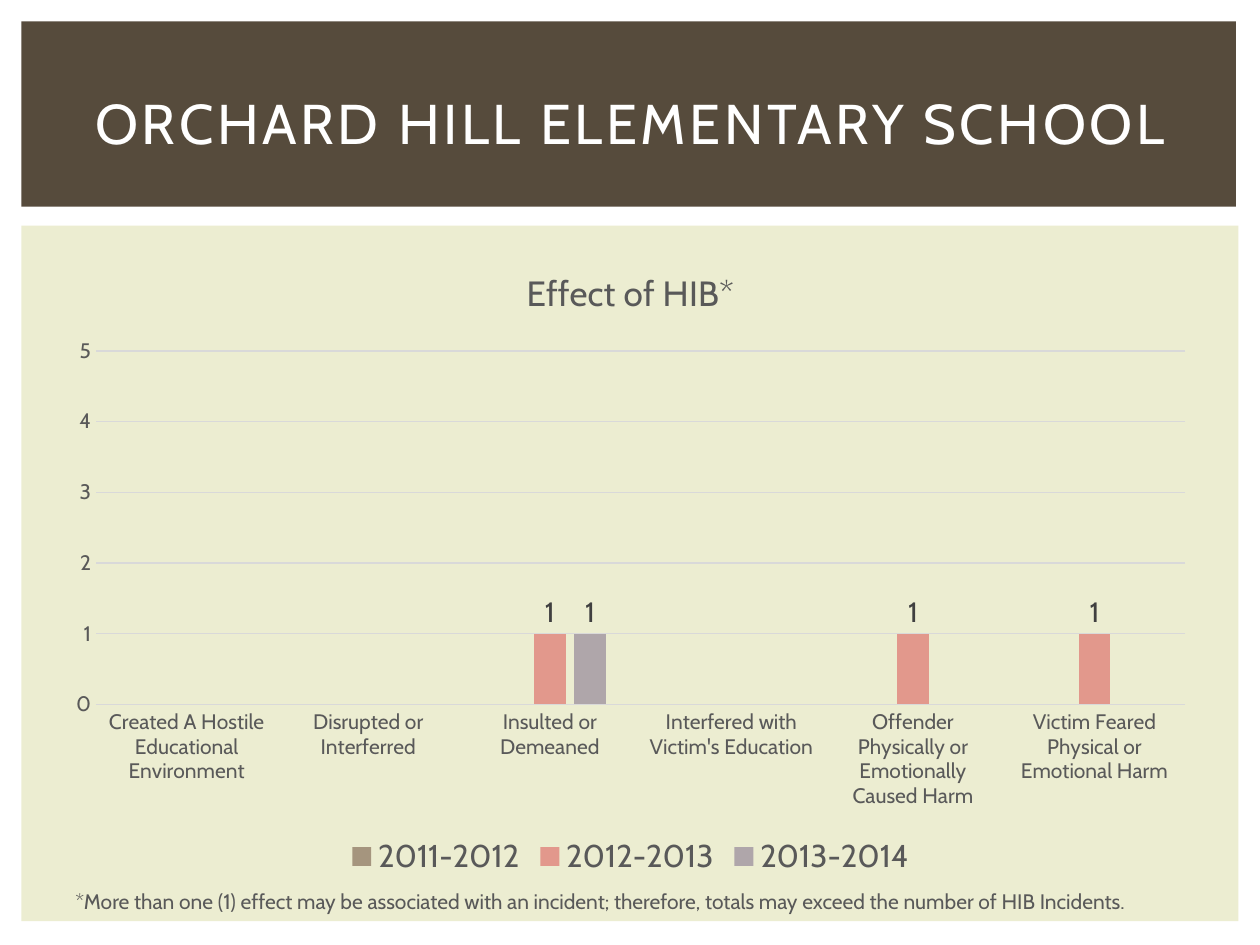
from pptx import Presentation
from pptx.chart.data import CategoryChartData
from pptx.dml.color import RGBColor
from pptx.enum.chart import XL_CHART_TYPE, XL_LABEL_POSITION, XL_LEGEND_POSITION, XL_TICK_MARK
from pptx.enum.shapes import MSO_SHAPE
from pptx.enum.text import MSO_ANCHOR, PP_ALIGN
from pptx.util import Inches, Pt

RECTANGLE = MSO_SHAPE.RECTANGLE
COLUMNS = XL_CHART_TYPE.COLUMN_CLUSTERED
OUTSIDE_END = XL_LABEL_POSITION.OUTSIDE_END
BOTTOM = XL_LEGEND_POSITION.BOTTOM
NO_TICK = XL_TICK_MARK.NONE
MIDDLE = MSO_ANCHOR.MIDDLE
LEFT, CENTER = PP_ALIGN.LEFT, PP_ALIGN.CENTER

FONT = "Cabin"
GRAY = "595959"
GRID = "D9D9D9"
CATEGORIES = [
    "Created A Hostile Educational Environment",
    "Disrupted or Interferred",
    "Insulted or Demeaned",
    "Interfered with Victim's Education",
    "Offender Physically or Emotionally Caused Harm",
    "Victim Feared Physical or Emotional Harm",
]
SERIES = [
    ("2011-2012", "A5957E", [None] * 6),
    ("2012-2013", "E2988C", [None, None, 1, None, 1, 1]),
    ("2013-2014", "AFA6AA", [None, None, 1, None, None, None]),
]


def color(value):
    return RGBColor.from_string(value)


def style_font(font, size, value):
    font.name = FONT
    font.size = Pt(size)
    font.bold = False
    font.color.rgb = color(value)


def style_line(line, value):
    line.color.rgb = color(value)
    line.width = Pt(0.75)


def add_panel(page, left, top, width, height, fill):
    panel = page.shapes.add_shape(
        RECTANGLE, Inches(left), Inches(top), Inches(width), Inches(height))
    panel.shadow.inherit = False
    panel.fill.solid()
    panel.fill.fore_color.rgb = color(fill)
    panel.line.fill.background()


def add_text(page, left, top, width, height, text, size, value, align=LEFT, spacing=0):
    box = page.shapes.add_textbox(
        Inches(left), Inches(top), Inches(width), Inches(height))
    frame = box.text_frame
    frame.word_wrap = True
    frame.vertical_anchor = MIDDLE
    frame.text = text
    para = frame.paragraphs[0]
    para.alignment = align
    span = para.runs[0]
    style_font(span.font, size, value)
    if spacing:
        span.font._element.set("spc", str(spacing * 100))


def style_axes(chart):
    for axis in (chart.category_axis, chart.value_axis):
        axis.major_tick_mark = NO_TICK
        axis.minor_tick_mark = NO_TICK
        style_font(axis.tick_labels.font, 12, GRAY)
    style_line(chart.category_axis.format.line, GRID)
    values = chart.value_axis
    values.minimum_scale = 0
    values.maximum_scale = 5
    values.major_unit = 1
    values.format.line.fill.background()
    values.has_major_gridlines = True
    style_line(values.major_gridlines.format.line, GRID)


def style_series(series, fill):
    series.format.fill.solid()
    series.format.fill.fore_color.rgb = color(fill)
    series.invert_if_negative = False
    labels = series.data_labels
    labels.show_value = True
    labels.position = OUTSIDE_END
    style_font(labels.font, 16, "404040")


def add_effect_chart(page, left, top, width, height):
    data = CategoryChartData()
    data.categories = CATEGORIES
    for name, _, values in SERIES:
        data.add_series(name, values)
    chart = page.shapes.add_chart(
        COLUMNS, Inches(left), Inches(top), Inches(width), Inches(height), data).chart
    style_font(chart.font, 10, "000000")

    chart.has_title = True
    title = chart.chart_title.text_frame
    title.text = "Effect of HIB*"
    style_font(title.paragraphs[0].runs[0].font, 20, GRAY)
    chart.chart_title.include_in_layout = False

    chart.has_legend = True
    chart.legend.position = BOTTOM
    chart.legend.include_in_layout = False
    style_font(chart.legend.font, 18, GRAY)

    style_axes(chart)
    plot = chart.plots[0]
    plot.vary_by_categories = False
    plot.gap_width = 219
    plot.overlap = -27
    for series, (_, fill, _) in zip(plot.series, SERIES):
        style_series(series, fill)


def main():
    deck = Presentation()
    deck.slide_width = Inches(10)
    deck.slide_height = Inches(7.5)
    page = deck.slides.add_slide(deck.slide_layouts[6])
    add_panel(page, 0.17, 1.79, 9.66, 5.52, "ECEDD1")
    add_panel(page, 0.17, 0.17, 9.64, 1.47, "564B3C")
    add_effect_chart(page, 0.42, 1.92, 9.17, 5.08)
    add_text(page, 0.5, 7, 9.42, 0.3,
             "*More than one (1) effect may be associated with an incident; "
             "therefore, totals may exceed the number of HIB Incidents.", 12, GRAY)
    add_text(page, 0.42, 0.39, 9.17, 1.15, "ORCHARD HILL ELEMENTARY SCHOOL",
             32, "FFFFFF", align=CENTER, spacing=2)
    deck.save("out.pptx")


if __name__ == "__main__":
    main()
